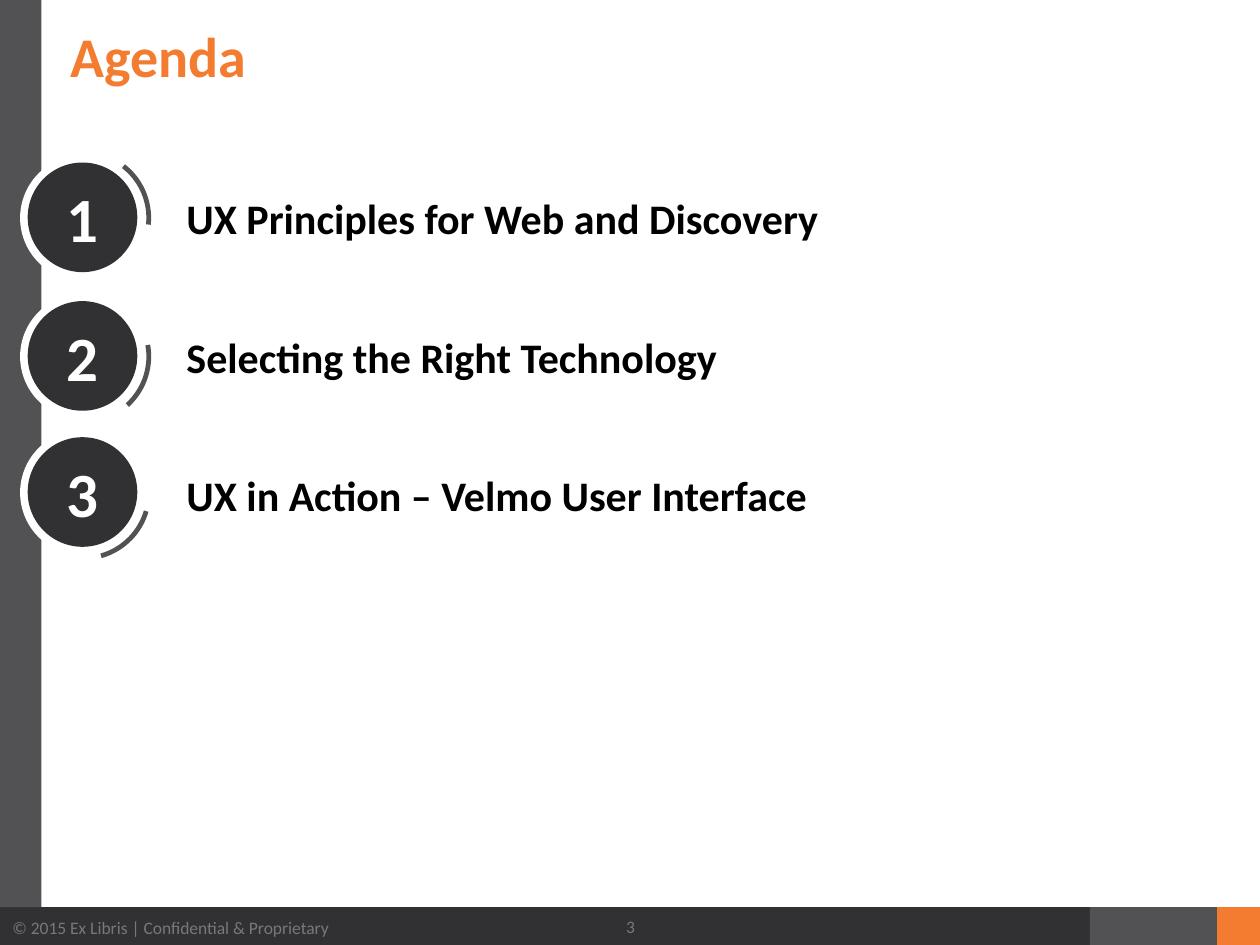
from pptx import Presentation
from pptx import util as u
from pptx.dml.color import RGBColor
from pptx.enum import shapes, text

COLS, ROWS = 10, 7.5
ORANGE, DARK, GREY, MUTED = "F47C30", "313133", "525254", "787878"
WHITE, BLACK = "FFFFFF", "000000"
SHAPE = shapes.MSO_SHAPE
CENTER = text.PP_ALIGN.CENTER


def rgb(value):
    return RGBColor.from_string(value)


class Deck:
    """Style and current slide; lengths are columns and rows of a 10 x 7.5 grid."""
    font = "Calibri"

    def __init__(self):
        self.prs = Presentation()
        self.prs.slide_width, self.prs.slide_height = u.Inches(10), u.Inches(7.5)
        self.s = self.prs.slides.add_slide(self.prs.slide_layouts[6])

    def box(self, x, y, w, h):
        col, row = self.prs.slide_width / COLS, self.prs.slide_height / ROWS
        return round(x * col), round(y * row), round(w * col), round(h * row)

    def set_text(self, sp, words, size, color, bold=False, align=None,
                 anchor=text.MSO_ANCHOR.MIDDLE):
        tf = sp.text_frame
        tf.text, tf.word_wrap, tf.vertical_anchor = words, True, anchor
        p = tf.paragraphs[0]
        p.alignment = align or text.PP_ALIGN.LEFT
        f = p.runs[0].font
        f.name, f.size, f.bold = self.font, u.Pt(size), bold
        f.color.rgb = rgb(color)
        return tf

    def shape(self, kind, at, fill, parent=None):
        sp = (parent or self.s).shapes.add_shape(kind, *self.box(*at))
        sp.shadow.inherit = False
        sp.fill.solid()
        sp.fill.fore_color.rgb = rgb(fill)
        sp.line.fill.background()
        return sp

    def label(self, at, words, size, color, inset=None, **style):
        tf = self.set_text(self.s.shapes.add_textbox(*self.box(*at)),
                           words, size, color, **style)
        if inset is not None:
            tf.margin_left = tf.margin_right = u.Inches(inset)
            tf.margin_top = tf.margin_bottom = u.Inches(inset)
        return tf

    def badge(self, number, top, turn):
        """Numbered disc on a white ring, with a short arc turned around it."""
        g = self.s.shapes.add_group_shape()
        self.shape(SHAPE.OVAL, (0.16, top, 1, 1), WHITE, g)
        arc = self.shape(SHAPE.BLOCK_ARC, (0.12, top - 0.04, 1.08, 1.08), GREY, g)
        for i, value in enumerate((181.725, 0.424, 0.035)):
            arc.adjustments[i] = value
        arc.rotation = turn
        disc = self.shape(SHAPE.OVAL, (0.22, top + 0.06, 0.87, 0.87), DARK, g)
        self.set_text(disc, str(number), 36, WHITE, bold=True, align=CENTER)


def main():
    d = Deck()
    footer = d.shape(SHAPE.RECTANGLE, (0, 7.2, 8.65, 0.32), DARK)
    d.set_text(footer, "© 2015 Ex Libris | Confidential & Proprietary", 10, MUTED)
    d.shape(SHAPE.RECTANGLE, (8.65, 7.2, 1.01, 0.32), GREY)
    d.shape(SHAPE.RECTANGLE, (9.66, 7.2, 0.35, 0.32), ORANGE)
    d.shape(SHAPE.RECTANGLE, (0, 0, 0.33, 7.2), GREY)

    title = d.label((0.46, 0.18, 8.5, 1.19), "Agenda", 32, ORANGE, bold=True,
                    anchor=text.MSO_ANCHOR.TOP)
    title.paragraphs[0].line_spacing = 0.9

    agenda = [("UX Principles for Web and Discovery", 1.23, 5.1),
              ("Selecting the Right Technology", 2.33, 47),
              ("UX in Action – Velmo User Interface", 3.41, 73.5)]
    for i, (topic, top, turn) in enumerate(agenda):
        d.badge(i + 1, top, turn)
        d.label((1.43, 1.38 + 1.1 * i, 6.64, 0.7), topic, 24, BLACK,
                inset=0.05, bold=True)

    d.label((4.42, 7.16, 1.17, 0.39), "3", 10, MUTED, align=CENTER)
    d.prs.save("out.pptx")


if __name__ == "__main__":
    main()
